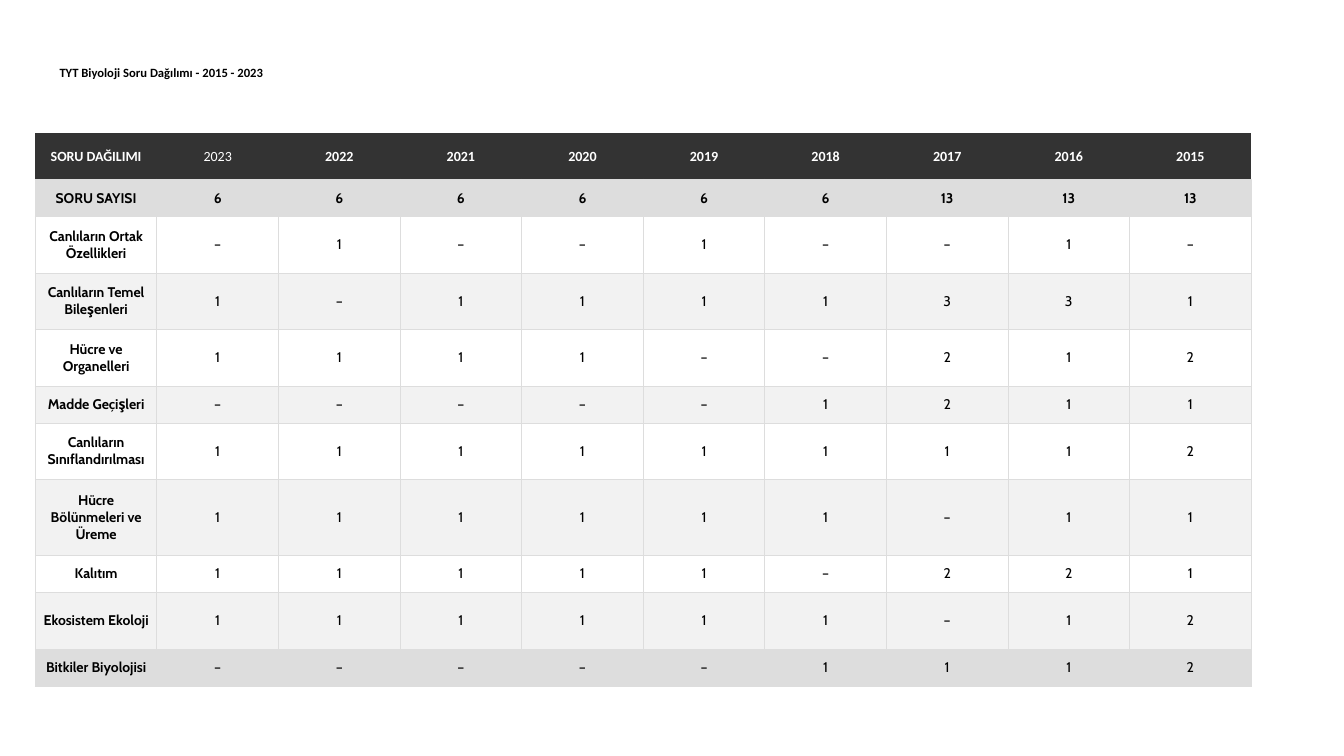
from lxml import etree
from pptx import Presentation, util as u
from pptx.dml.color import RGBColor
from pptx.enum import text as t
from pptx.oxml import ns

PX = 9144
COLORS = {
    "white": "FFFFFF",
    "black": "000000",
    "header": "333333",
    "total": "DDDDDD",
    "band": "F2F2F2",
    "grid": "DDDDDD",
}
YEARS = ["SORU DAĞILIMI", *range(2023, 2014, -1)]
TOPICS = [
    ("SORU SAYISI", "6 6 6 6 6 6 13 13 13", 37),
    ("Canlıların Ortak Özellikleri", "– 1 – – 1 – – 1 –", 56),
    ("Canlıların Temel Bileşenleri", "1 – 1 1 1 1 3 3 1", 56),
    ("Hücre ve Organelleri", "1 1 1 1 – – 2 1 2", 56),
    ("Madde Geçişleri", "– – – – – 1 2 1 1", 37),
    ("Canlıların Sınıflandırılması", "1 1 1 1 1 1 1 1 2", 56),
    ("Hücre Bölünmeleri ve Üreme", "1 1 1 1 1 1 – 1 1", 75),
    ("Kalıtım", "1 1 1 1 1 – 2 2 1", 37),
    ("Ekosistem Ekoloji", "1 1 1 1 1 1 – 1 2", 56),
    ("Bitkiler Biyolojisi", "– – – – – 1 1 1 2", 37),
]
HEADER_HEIGHT = 46


def px(length):
    return u.Emu(length * PX)


def rgb(name):
    return RGBColor.from_string(COLORS[name])


def write(frame, words, size=10, font="Cabin", color="black", bold=False,
          align=t.PP_ALIGN.CENTER):
    frame.word_wrap = True
    paragraph = frame.paragraphs[0]
    paragraph.alignment = align
    run = paragraph.add_run()
    run.text = str(words)
    run.font.size = u.Pt(size)
    run.font.name = font
    run.font.bold = bold
    run.font.color.rgb = rgb(color)


def set_margins(area, horizontal, vertical):
    area.margin_left = area.margin_right = px(horizontal)
    area.margin_top = area.margin_bottom = px(vertical)


def draw_borders(cell, sides):
    properties = cell._tc.get_or_add_tcPr()
    for side in "LRTB":
        line = etree.SubElement(properties, ns.qn(f"a:ln{side}"), w=str(u.Pt(0.75)))
        if side in sides:
            fill = etree.SubElement(line, ns.qn("a:solidFill"))
            etree.SubElement(fill, ns.qn("a:srgbClr"), val=COLORS["grid"])
        else:
            etree.SubElement(line, ns.qn("a:noFill"))


def format_cell(cell, words, fill, sides="LRTB", margins=(8, 8), **style):
    cell.vertical_anchor = t.MSO_ANCHOR.MIDDLE
    set_margins(cell, *margins)
    draw_borders(cell, sides)
    if fill:
        cell.fill.solid()
        cell.fill.fore_color.rgb = rgb(fill)
    else:
        cell.fill.background()
    write(cell.text_frame, words, **style)


def add_heading(slide, left, top, width, height):
    heading = slide.shapes.title
    heading.left, heading.top = px(left), px(top)
    heading.width, heading.height = px(width), px(height)
    heading.fill.solid()
    heading.fill.fore_color.rgb = rgb("white")
    frame = heading.text_frame
    frame.auto_size = t.MSO_AUTO_SIZE.NONE
    frame.vertical_anchor = t.MSO_ANCHOR.TOP
    set_margins(frame, 10, 6)
    write(frame, "TYT Biyoloji Soru Dağılımı - 2015 - 2023", size=9,
          font="Calibri", bold=True, align=t.PP_ALIGN.LEFT)


def add_distribution(slide, left, top, width):
    heights = [HEADER_HEIGHT, *(height for _, _, height in TOPICS)]
    table = slide.shapes.add_table(len(heights), len(YEARS), px(left), px(top),
                                   px(width), px(sum(heights))).table
    table.first_row = table.horz_banding = False
    for row, height in zip(table.rows, heights):
        row.height = px(height)
    for column, year in enumerate(YEARS):
        format_cell(table.cell(0, column), year, "header", sides="B",
                    margins=(1, 12), font="Calibri", color="white",
                    bold=column != 1)
    for row, (topic, counts, _) in enumerate(TOPICS, 1):
        if row in (1, len(TOPICS)):
            fill = "total"
        else:
            fill = "band" if row % 2 else None
        for column, words in enumerate([topic, *counts.split()]):
            format_cell(table.cell(row, column), words, fill,
                        bold=column == 0 or row == 1)


def main():
    deck = Presentation()
    deck.slide_width, deck.slide_height = px(1333), px(750)
    slide = deck.slides.add_slide(deck.slide_layouts[5])
    add_heading(slide, 49, 58, 1369, 56)
    add_distribution(slide, 35, 132, 1206)
    deck.save("out.pptx")


if __name__ == "__main__":
    main()
